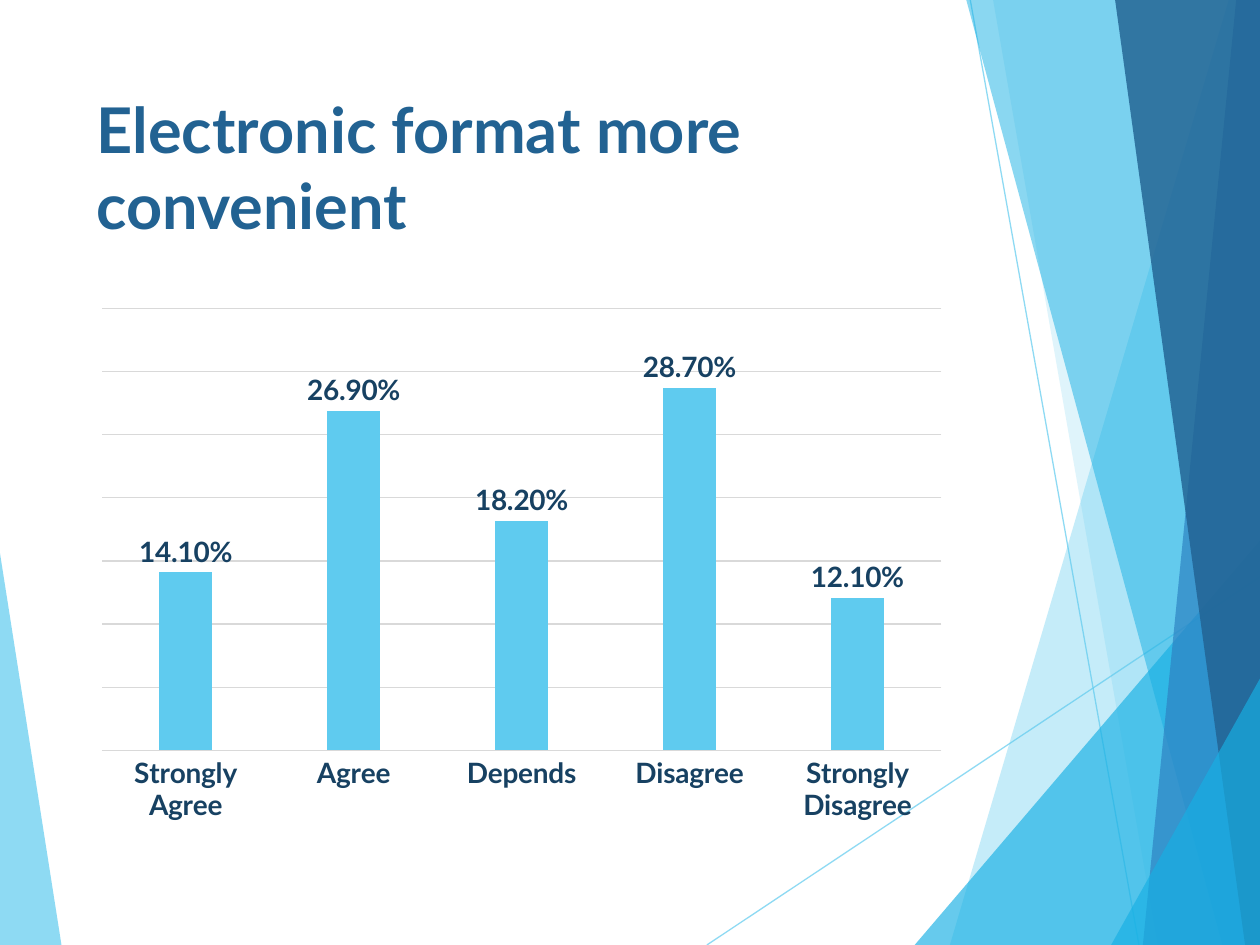
import pptx
import pptx.util
import pptx.chart.data
import pptx.dml.color
import pptx.enum.chart
import pptx.enum.shapes
import pptx.enum.text
import pptx.oxml
import pptx.oxml.ns

Cm, Pt = pptx.util.Cm, pptx.util.Pt
RGB = pptx.dml.color.RGBColor
SKY = RGB(0x5F, 0xCB, 0xEF)
CYAN = RGB(0x17, 0xB0, 0xE4)
BLUE = RGB(0x2E, 0x83, 0xC3)
NAVY = RGB(0x22, 0x62, 0x92)
INK = RGB(0x17, 0x41, 0x62)
GRID = RGB(0xD9, 0xD9, 0xD9)
FONT = "Lato"
WIDTH, HEIGHT = 25.4, 19.05

HEADING = "Electronic format more convenient"
ANSWERS = {
    "Strongly Agree": 0.141,
    "Agree": 0.269,
    "Depends": 0.182,
    "Disagree": 0.287,
    "Strongly Disagree": 0.121,
}
LEFT_WEDGE = ([(0, 11.15), (1.24, HEIGHT), (0, HEIGHT)], SKY, 70)
RAYS = [((14.25, HEIGHT), (WIDTH, 11.63)), ((19.56, 0), (22.96, HEIGHT))]
RAY_OPACITY = 70
BANDS = [
    (24.77, 19.15, SKY, 36),
    (20.02, 23.34, SKY, 20),
    (18.44, 10.9, CYAN, 66),
    (19.48, 24.64, CYAN, 50),
    (24.92, 23.04, BLUE, 70),
    (22.48, 25.1, NAVY, 82),
    (22.4, 13.68, CYAN, 66),
]
CORNERS = (2, 6)

HEADING_BOX = (1.7, 1.7, 17.63, 3.66)
CHART_BOX = (1.7, 6, 17.63, 10.77)
HEADING_FONT = {"name": FONT, "size": Pt(36), "bold": True}
LABEL_FONT = {"name": FONT, "size": Pt(16), "bold": True}
CATEGORY_AXIS = {
    "major_tick_mark": pptx.enum.chart.XL_TICK_MARK.NONE,
    "minor_tick_mark": pptx.enum.chart.XL_TICK_MARK.NONE,
    "has_major_gridlines": False,
}
VALUE_AXIS = {
    "visible": False,
    "has_major_gridlines": True,
    "minimum_scale": 0,
    "maximum_scale": 0.35,
    "major_unit": 0.05,
}
LABELS = {
    "show_value": True,
    "number_format": "0.00%",
    "number_format_is_linked": False,
    "position": pptx.enum.chart.XL_LABEL_POSITION.OUTSIDE_END,
}


def apply(target, values):
    for key, value in values.items():
        setattr(target, key, value)


def style_font(font, values, color):
    apply(font, values)
    font.color.rgb = color


def style_line(line, color):
    line.color.rgb = color
    line.width = Pt(0.75)


def set_opacity(shape, percent):
    for color in shape._element.spPr.iter(pptx.oxml.ns.qn("a:srgbClr")):
        pptx.oxml.ns.qn("a:alpha")
        alpha = color.makeelement(pptx.oxml.ns.qn("a:alpha"), {"val": str(percent * 1000)})
        color.append(alpha)


def add_polygon(slide, points, color, opacity):
    corners = [(Cm(x), Cm(y)) for x, y in points]
    builder = slide.shapes.build_freeform(*corners[0])
    builder.add_line_segments(corners[1:])
    polygon = builder.convert_to_shape()
    polygon.shadow.inherit = False
    polygon.fill.solid()
    polygon.fill.fore_color.rgb = color
    polygon.line.fill.background()
    set_opacity(polygon, opacity)


def add_ray(slide, start, end):
    ray = slide.shapes.add_connector(
        pptx.enum.shapes.MSO_CONNECTOR.STRAIGHT, *map(Cm, start + end))
    style_line(ray.line, SKY)
    set_opacity(ray, RAY_OPACITY)
    properties = ray._element.spPr
    properties.append(properties.makeelement(pptx.oxml.ns.qn("a:effectLst"), {}))


def band_points(index, first, second):
    if index in CORNERS:
        return [(first, HEIGHT), (WIDTH, second), (WIDTH, HEIGHT)]
    return [(first, 0), (second, HEIGHT), (WIDTH, HEIGHT), (WIDTH, 0)]


def add_heading(slide):
    frame = slide.shapes.add_textbox(*map(Cm, HEADING_BOX)).text_frame
    apply(frame, {"word_wrap": True, "vertical_anchor": pptx.enum.text.MSO_ANCHOR.TOP})
    run = frame.paragraphs[0].add_run()
    run.text = HEADING
    style_font(run.font, HEADING_FONT, NAVY)


def add_answers(slide):
    data = pptx.chart.data.CategoryChartData(number_format="0.00%")
    data.categories = list(ANSWERS)
    data.add_series("Series 1", list(ANSWERS.values()))
    chart = slide.shapes.add_chart(
        pptx.enum.chart.XL_CHART_TYPE.COLUMN_CLUSTERED, *map(Cm, CHART_BOX), data).chart
    apply(chart, {"has_legend": False, "has_title": False})
    apply(chart.font, {"name": FONT, "size": Pt(10)})

    apply(chart.category_axis, CATEGORY_AXIS)
    style_font(chart.category_axis.tick_labels.font, LABEL_FONT, INK)
    style_line(chart.category_axis.format.line, GRID)
    apply(chart.value_axis, VALUE_AXIS)
    style_line(chart.value_axis.major_gridlines.format.line, GRID)

    plot = chart.plots[0]
    apply(plot, {"gap_width": 219, "overlap": -27, "vary_by_categories": False})
    columns = plot.series[0]
    columns.format.fill.solid()
    columns.format.fill.fore_color.rgb = SKY
    apply(columns.data_labels, LABELS)
    style_font(columns.data_labels.font, LABEL_FONT, INK)


def main():
    deck = pptx.Presentation()
    apply(deck, {"slide_width": Cm(WIDTH), "slide_height": Cm(HEIGHT)})
    slide = deck.slides.add_slide(deck.slide_layouts[6])
    add_polygon(slide, *LEFT_WEDGE)
    for start, end in RAYS:
        add_ray(slide, start, end)
    for index, (first, second, color, opacity) in enumerate(BANDS):
        add_polygon(slide, band_points(index, first, second), color, opacity)
    add_heading(slide)
    add_answers(slide)
    deck.save("out.pptx")


if __name__ == "__main__":
    main()
